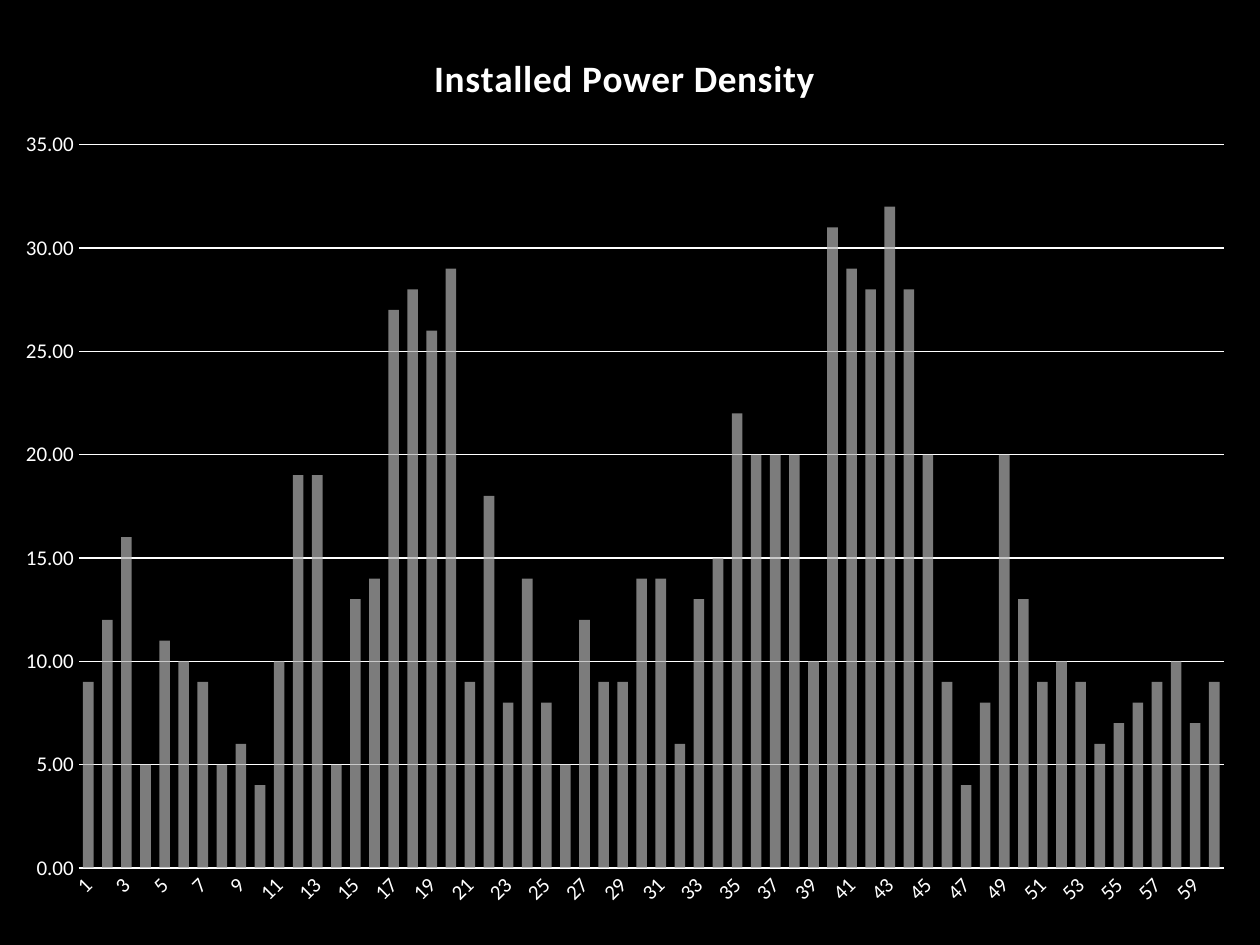
from pptx import Presentation
from pptx.chart.data import CategoryChartData
from pptx.dml.color import RGBColor
from pptx.enum.chart import XL_CHART_TYPE as Kind, XL_TICK_MARK as Tick
from pptx.oxml import parse_xml
from pptx.oxml.ns import nsdecls, qn
from pptx.util import Pt

BLACK = RGBColor(0, 0, 0)
WHITE = RGBColor(255, 255, 255)
GREY = RGBColor(0xB2, 0xB2, 0xB2)
FONT = "Calibri"
NAME = "Installed Power Density"

POWER = [
    9, 12, 16, 5, 11, 10, 9, 5, 6, 4,
    10, 19, 19, 5, 13, 14, 27, 28, 26, 29,
    9, 18, 8, 14, 8, 5, 12, 9, 9, 14,
    14, 6, 13, 15, 22, 20, 20, 20, 10, 31,
    29, 28, 32, 28, 20, 9, 4, 8, 20, 13,
    9, 10, 9, 6, 7, 8, 9, 10, 7, 9,
]


def style(font, size, bold=False):
    font.name, font.size, font.bold = FONT, Pt(size), bold
    font.color.rgb = WHITE


def place(part, spot, target="", **dims):
    """Give a chart part a manual layout, in per cent of the chart."""
    old = part.find(qn("c:layout"))
    if old is not None:
        part.remove(old)
    modes = '<c:xMode val="edge"/><c:yMode val="edge"/>'
    sizes = "".join(f'<c:{key} val="{val / 100}"/>' for key, val in dims.items())
    part.insert(spot, parse_xml(
        f'<c:layout {nsdecls("c")}><c:manualLayout>{target}{modes}{sizes}'
        '</c:manualLayout></c:layout>'))


# Slide with a black background
deck = Presentation()
deck.slide_width, deck.slide_height = Pt(720), Pt(540)
slide = deck.slides.add_slide(deck.slide_layouts[6])
slide.background.fill.solid()
slide.background.fill.fore_color.rgb = BLACK

# Column chart
data = CategoryChartData(number_format="0.00")
data.categories = [str(num) for num in range(1, len(POWER) + 1)]
data.add_series(NAME, POWER)
chart = slide.shapes.add_chart(
    Kind.COLUMN_CLUSTERED, Pt(0), Pt(12), Pt(714), Pt(516), data).chart
chart.has_legend = False
style(chart.font, 10)

# Chart title
chart.has_title = True
title = chart.chart_title
run = title.text_frame.paragraphs[0].add_run()
run.text = NAME
style(run.font, 21.3, True)
run.font._element.set("spc", "50")
title.include_in_layout = False
place(title._element, 1, x=34.2, y=2.8)

# Columns
plot = chart.plots[0]
plot.gap_width, plot.overlap = 80, 25
plot.vary_by_categories = False
fill = plot.series[0].format.fill
fill.solid()
fill.fore_color.rgb = GREY
tint = plot.series[0]._element.find(".//" + qn("a:srgbClr"))
tint.append(parse_xml(f'<a:alpha {nsdecls("a")} val="70000"/>'))

# Axes
cats, vals = chart.category_axis, chart.value_axis
for axis in (cats, vals):
    axis.major_tick_mark = axis.minor_tick_mark = Tick.NONE
    style(axis.tick_labels.font, 12)
cats.format.line.color.rgb = WHITE
cats.format.line.width = Pt(1.25)
cats._element.find(".//" + qn("a:bodyPr")).set("rot", "-2700000")

vals.minimum_scale, vals.maximum_scale, vals.major_unit = 0, 35, 5
vals.tick_labels.number_format = "0.00"
vals.tick_labels.number_format_is_linked = False
vals.format.line.fill.background()
vals.has_major_gridlines = True
grid = vals.major_gridlines.format.line
grid.color.rgb = WHITE
grid.width = Pt(0.75)

# Plot area inside the axis labels
area = chart._chartSpace.find(".//" + qn("c:plotArea"))
place(area, 0, '<c:layoutTarget val="inner"/>', x=6.3, y=13.7, w=91.65, h=80.1)

deck.save("out.pptx")
